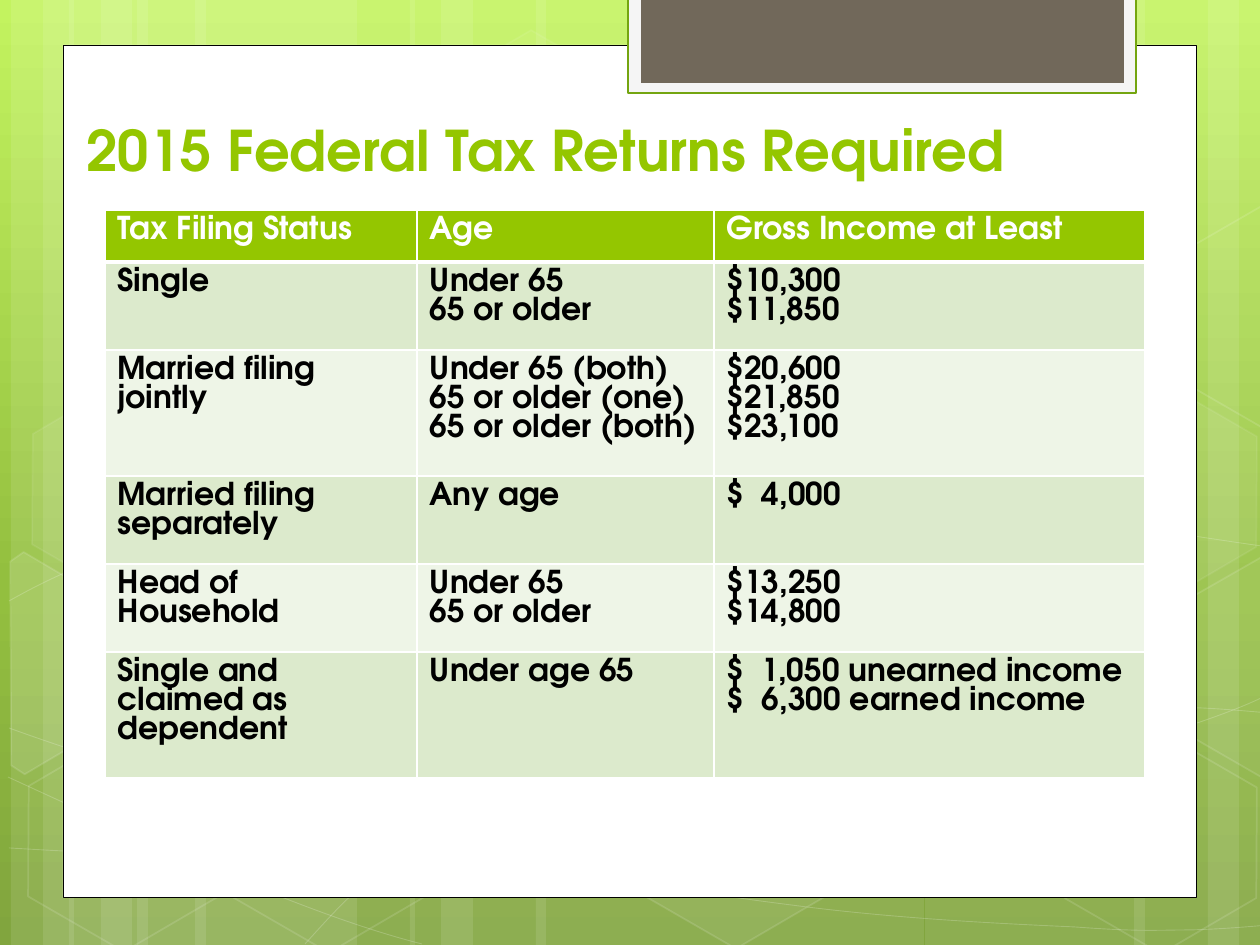
"""Build a slide with a table of the 2015 federal tax filing thresholds."""
from copy import deepcopy
from math import cos, radians, sin

from lxml.etree import SubElement
from pptx import Presentation
from pptx.dml.color import RGBColor
from pptx.enum.shapes import MSO_SHAPE
from pptx.enum.text import MSO_ANCHOR, MSO_AUTO_SIZE, PP_ALIGN
from pptx.oxml.ns import qn
from pptx.util import Pt

PX = 914400 / 126
FONT = "TeX Gyre Adventor"
COLORS = {
    "sky": "C3F35F", "leaf": "93BF3F", "moss": "81A53E", "white": "FFFFFF",
    "black": "000000", "frame": "F5F5F5", "frame_line": "74A510",
    "tab": "71685A", "accent": "94C600", "odd": "DCEACC", "even": "EEF5E7",
}


def style(shape, fill=None, line=None, width=1, alphas=()):
    """Set fill, line and the opacity in percent of each colour in turn."""
    shape.shadow.inherit = False
    for part, color in ((shape.fill, fill), (shape.line.fill, line)):
        if color:
            part.solid()
            part.fore_color.rgb = RGBColor.from_string(COLORS[color])
        else:
            part.background()
    if line:
        shape.line.width = Pt(width)
    colors = shape.element.spPr.iter(qn("a:srgbClr"))
    for color, alpha in zip(list(colors), alphas):
        SubElement(color, qn("a:alpha")).set("val", str(alpha * 1000))


def write(para, text, size, color):
    """Add one bold run to a paragraph."""
    span = para.add_run()
    span.text = text
    span.font.name = FONT
    span.font.size = Pt(size)
    span.font.bold = True
    span.font.color.rgb = RGBColor.from_string(COLORS[color])


deck = Presentation()
deck.slide_width = round(1260 * PX)
deck.slide_height = round(945 * PX)
page = deck.slides.add_slide(deck.slide_layouts[5])
shapes = page.shapes

backdrop = page.background.fill
backdrop.gradient()
backdrop.gradient_angle = 270
stop_list = page.element.find(".//" + qn("a:gsLst"))
stop_list.append(deepcopy(stop_list[-1]))
for stop, position, color in zip(backdrop.gradient_stops, (0, 0.62, 1), ("sky", "leaf", "moss")):
    stop.position = position
    stop.color.rgb = RGBColor.from_string(COLORS[color])

decor = shapes.add_group_shape().shapes
bands = [
    (137, 220), (11, 63), (43, 105), (195, 220), (69, 63), (101, 105),
    (925, 220), (1208, 63), (1134, 105), (536, 388), (410, 63), (441, 105),
]
for left, width in bands:
    band = decor.add_shape(MSO_SHAPE.RECTANGLE, round(left * PX), 0, round(width * PX), deck.slide_height)
    style(band, "white", alphas=(10,))

curves = [
    [(9, 848), (77, 852), (145, 856), (239, 854), (334, 853), (451, 851), (577, 838),
     (703, 825), (882, 801), (998, 777), (1113, 753), (1231, 715), (1269, 694)],
    [(9, 601), (45, 581), (82, 562), (152, 543), (224, 524), (326, 499), (437, 488),
     (549, 479), (685, 478), (824, 488), (963, 498), (1193, 537), (1269, 547)],
    [(8, 777), (160, 847), (311, 916), (422, 944)],
    [(9, 728), (48, 742), (88, 756), (161, 776), (234, 795), (344, 827), (450, 848),
     (554, 869), (687, 892), (791, 905), (896, 919), (1008, 924), (1075, 927),
     (1142, 932), (1158, 930), (1191, 930), (1223, 929), (1246, 927), (1269, 925)],
    [(305, 944), (328, 919), (350, 893), (381, 871), (411, 847), (454, 823), (489, 805),
     (524, 787), (546, 780), (591, 767), (638, 754), (722, 737), (766, 728),
     (811, 719), (818, 719), (857, 717), (896, 713), (958, 709), (1000, 708),
     (1045, 707), (1116, 708), (1116, 708), (1144, 708), (1173, 708), (1201, 708),
     (1223, 709), (1245, 711), (1268, 713)],
]
for start, *points in curves:
    builder = decor.build_freeform(*start, scale=PX)
    builder.add_line_segments(points, close=False)
    wave = builder.convert_to_shape()
    outline = wave.element.find(".//" + qn("a:path"))
    segments = outline.findall(qn("a:lnTo"))
    for first in range(0, len(segments), 3):
        bend = SubElement(outline, qn("a:cubicBezTo"))
        for segment in segments[first:first + 3]:
            bend.append(segment[0])
            outline.remove(segment)
    style(wave, line="white", width=0.5, alphas=(20,))

hexagons = [
    (421, 45, 4, 8), (626, 742, 6, 12), (14, 745, 0, 12), (18, 393, 7, 8),
    (219, 746, 0, 12), (949, 571, 10, 12), (1051, 747, 0, 12), (1051, 396, 7, 8),
]
for left, top, fill_alpha, line_alpha in hexagons:
    hexagon = decor.add_shape(
        MSO_SHAPE.HEXAGON, round(left * PX), round(top * PX), round(220 * PX), round(192 * PX))
    hexagon.adjustments[0] = 0.285
    hexagon.rotation = 30
    alphas = (fill_alpha, line_alpha) if fill_alpha else (line_alpha,)
    style(hexagon, "white" if fill_alpha else None, "white", 1, alphas)

cut_hexagons = [
    ((45, 675), 10, [(10, 561), (24, 552), (121, 609), (120, 718), (25, 774), (11, 765)]),
    ((1241, 655), 4, [(1167, 611), (1263, 556), (1271, 562), (1271, 772), (1263, 777), (1167, 722)]),
    ((1241, 304), 0, [(1167, 261), (1263, 205), (1273, 212), (1271, 422), (1263, 427), (1167, 372)]),
]
c, s = cos(radians(30)), sin(radians(30))
for (mid_x, mid_y), fill_alpha, corners in cut_hexagons:
    offsets = [(x - mid_x, y - mid_y) for x, y in corners]
    turned = [(mid_x + x * c + y * s, mid_y - x * s + y * c) for x, y in offsets]
    builder = decor.build_freeform(*turned[0], scale=PX)
    builder.add_line_segments(turned[1:], close=True)
    cut = builder.convert_to_shape()
    cut.rotation = 30
    alphas = (fill_alpha, 12) if fill_alpha else (12,)
    style(cut, "white" if fill_alpha else None, "white", 1, alphas)

panels = [
    ((63, 45, 1134, 853), "white", "black", 0.5),
    ((628, -3, 508, 96), "frame", "frame_line", 1.25),
    ((641, -3, 483, 86), "tab", None, 0),
]
for place, fill, line, width in panels:
    panel = shapes.add_shape(MSO_SHAPE.RECTANGLE, *(round(length * PX) for length in place))
    style(panel, fill, line, width)

title = shapes.title
title.left, title.top, title.width, title.height = (round(n * PX) for n in (74, 84, 1102, 105))
title.element.getparent().append(title.element)
title.text_frame.word_wrap = True
title.text_frame.auto_size = MSO_AUTO_SIZE.NONE
title.text_frame.vertical_anchor = MSO_ANCHOR.BOTTOM
title.text_frame.paragraphs[0].alignment = PP_ALIGN.LEFT
write(title.text_frame.paragraphs[0], "2015 Federal Tax Returns Required", 32, "accent")

rows = [
    (52, ["Tax Filing Status"], ["Age"], ["Gross Income at Least"]),
    (88, ["Single"], ["Under 65", "65 or older"], ["$10,300", "$11,850"]),
    (126, ["Married filing jointly"],
     ["Under 65 (both)", "65 or older (one)", "65 or older (both)"],
     ["$20,600", "$21,850", "$23,100"]),
    (88, ["Married filing separately"], ["Any age"], ["$  4,000"]),
    (88, ["Head of Household"], ["Under 65", "65 or older"], ["$13,250", "$14,800"]),
    (126, ["Single and claimed as dependent"], ["Under age 65"],
     ["$  1,050 unearned income", "$  6,300 earned income"]),
]
widths = (312, 297, 431)
table = shapes.add_table(
    len(rows), len(widths), round(105 * PX), round(210 * PX),
    round(sum(widths) * PX), round(sum(row[0] for row in rows) * PX)).table
for column, width in zip(table.columns, widths):
    column.width = round(width * PX)
for r, (height, *entries) in enumerate(rows):
    table.rows[r].height = round(height * PX)
    for col, lines in enumerate(entries):
        cell = table.cell(r, col)
        properties = cell._tc.get_or_add_tcPr()
        for side in ("L", "R", "T", "B"):
            heavy = (r, side) in ((0, "B"), (1, "T"))
            border = SubElement(properties, qn("a:ln" + side), w=str(Pt(3 if heavy else 1)))
            paint = SubElement(border, qn("a:solidFill"))
            SubElement(paint, qn("a:srgbClr"), val=COLORS["white"])
        cell.fill.solid()
        shade = "accent" if r == 0 else "odd" if r % 2 else "even"
        cell.fill.fore_color.rgb = RGBColor.from_string(COLORS[shade])
        frame = cell.text_frame
        for i, line in enumerate(lines):
            para = frame.add_paragraph() if i else frame.paragraphs[0]
            write(para, line, 18, "black" if r else "white")

deck.save("out.pptx")
